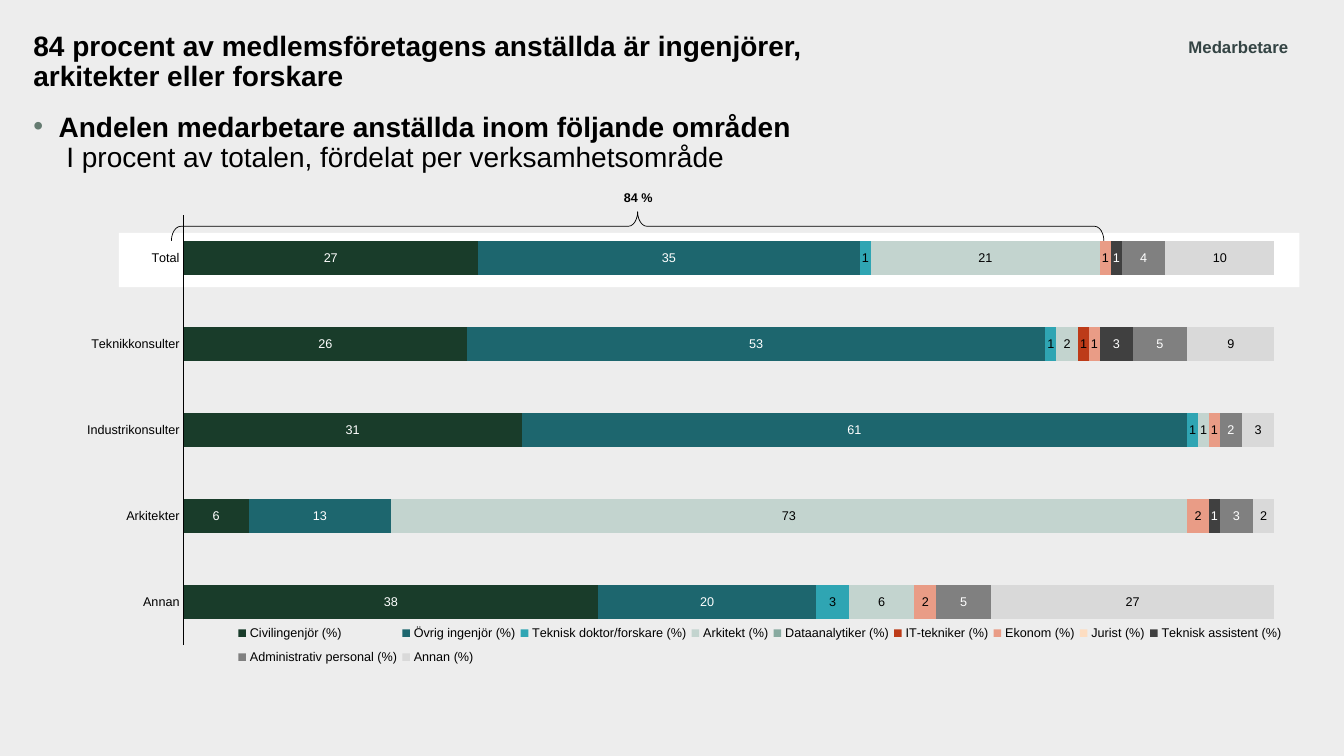
"""Build the slide on how the member companies' staff divide by profession."""
import pptx
import pptx.chart.data
import pptx.dml.color
import pptx.enum.chart
import pptx.enum.shapes
import pptx.enum.text
import pptx.oxml
import pptx.oxml.ns
import pptx.util

FONT = "Arial"
BLACK, WHITE = "000000", "FFFFFF"
HEADING = "84 procent av medlemsföretagens anställda är ingenjörer,\varkitekter eller forskare"
SUBHEADING = "Andelen medarbetare anställda inom följande områden"
UNIT_NOTE = " I procent av totalen, fördelat per verksamhetsområde"

AREAS = ["Total", "Teknikkonsulter", "Industrikonsulter", "Arkitekter", "Annan"]
PROFESSIONS = [
    ("Civilingenjör (%)", (27, 26, 31, 6, 38), "193C2A", WHITE),
    ("Övrig ingenjör (%)", (35, 53, 61, 13, 20), "1D666E", WHITE),
    ("Teknisk doktor/forskare (%)", (1, 1, 1, 0, 3), "2FA5B3", BLACK),
    ("Arkitekt\u00a0(%)", (21, 2, 1, 73, 6), "C3D4CF", BLACK),
    ("Dataanalytiker\u00a0(%)", (0, 0, 0, 0, 0), "88AAA0", None),
    ("IT-tekniker\u00a0(%)", (0, 1, 0, 0, 0), "BD3B18", BLACK),
    ("Ekonom\u00a0(%)", (1, 1, 1, 2, 2), "E99C86", BLACK),
    ("Jurist\u00a0(%)", (0, 0, 0, 0, 0), "FDDDC1", None),
    ("Teknisk assistent\u00a0(%)", (1, 3, 0, 1, 0), "404040", WHITE),
    ("Administrativ personal\u00a0(%)", (4, 5, 2, 3, 5), "808080", WHITE),
    ("Annan\u00a0(%)", (10, 9, 3, 2, 27), "D9D9D9", BLACK),
]

# left, top, width, height in percent of the slide
PLACES = {
    "highlight": (8.85, 30.8, 87.83, 7.2),
    "heading": (2.48, 4.27, 95.1, 7.47),
    "subheading": (2.48, 14.93, 95.1, 9.47),
    "tag": (86.78, 4.27, 10.73, 4),
    "chart": (4.43, 27.2, 92.25, 63.2),
    "brace": (12.75, 28, 69.38, 3.87),
    "sum": (45.68, 24.53, 3.68, 3.33),
}
# left, top, width, height as shares of the chart
PLOT = (0.1, 0.02, 0.88, 0.9)
LEGEND = (0.14, 0.86, 0.85, 0.12)

prs = pptx.Presentation()
prs.slide_width, prs.slide_height = pptx.util.Inches(13.33), pptx.util.Inches(7.5)
s = prs.slides.add_slide(prs.slide_layouts[6])


def rgb(value):
    """Turn a hex string into a colour."""
    return pptx.dml.color.RGBColor.from_string(value)


def place(name):
    """Give a part's box in slide units."""
    sides = (prs.slide_width, prs.slide_height) * 2
    return [int(share * side / 100) for share, side in zip(PLACES[name], sides)]


def style(font, size, color=BLACK, bold=False):
    """Set typeface, size, colour and weight."""
    font.name, font.size, font.bold = FONT, pptx.util.Pt(size), bold
    font.color.rgb = rgb(color)


def add_text(name, text, size, color=BLACK, inset=True, wrap=True):
    """Add a bold text box and return its paragraph."""
    tf = s.shapes.add_textbox(*place(name)).text_frame
    tf.word_wrap = wrap
    if not inset:
        tf.margin_left = tf.margin_top = tf.margin_right = tf.margin_bottom = 0
    p = tf.paragraphs[0]
    p.text = text
    if not inset:
        p.line_spacing = 0.9
    for r in p.runs:
        style(r.font, size, color, True)
    return p


def add_bullet(p, color):
    """Give a paragraph a hanging round bullet."""
    pPr = p._p.get_or_add_pPr()
    indent = pptx.util.Inches(0.25)
    pPr.set("marL", str(indent))
    pPr.set("indent", str(-indent))
    ns = pptx.oxml.ns.nsdecls("a")
    for xml in (
        f'<a:buClr {ns}><a:srgbClr val="{color}"/></a:buClr>',
        f'<a:buFont {ns} typeface="{FONT}"/>',
        f'<a:buChar {ns} char="•"/>',
    ):
        pPr.append(pptx.oxml.parse_xml(xml))


def set_layout(parent, index, box, inner=False):
    """Fix the position of a chart part."""
    for old in parent.findall(pptx.oxml.ns.qn("c:layout")):
        parent.remove(old)
    target = '<c:layoutTarget val="inner"/>' if inner else ""
    modes = "".join(f'<c:{k}Mode val="edge"/>' for k in "xy")
    sizes = "".join(f'<c:{k} val="{v}"/>' for k, v in zip("xywh", box))
    ns = pptx.oxml.ns.nsdecls("c")
    xml = f"<c:layout {ns}><c:manualLayout>{target}{modes}{sizes}</c:manualLayout></c:layout>"
    parent.insert(index, pptx.oxml.parse_xml(xml))


def add_staff_chart():
    """Add the stacked bars with their legend."""
    enum = pptx.enum.chart
    data = pptx.chart.data.CategoryChartData(number_format="0")
    data.categories = AREAS
    for name, values, _, _ in PROFESSIONS:
        data.add_series(name, values)
    chart = s.shapes.add_chart(enum.XL_CHART_TYPE.BAR_STACKED, *place("chart"), data).chart
    style(chart.font, 10)
    chart.has_title = False
    chart.has_legend = True
    chart.legend.position = enum.XL_LEGEND_POSITION.BOTTOM
    chart.legend.include_in_layout = False
    style(chart.legend.font, 9)

    areas, percent = chart.category_axis, chart.value_axis
    areas.reverse_order = True
    areas.major_tick_mark = enum.XL_TICK_MARK.NONE
    areas.format.line.color.rgb = rgb(BLACK)
    areas.format.line.width = pptx.util.Pt(0.75)
    style(areas.tick_labels.font, 9)
    percent.minimum_scale, percent.maximum_scale = 0, 100
    percent.has_major_gridlines = False
    percent.visible = False

    plot = chart.plots[0]
    plot.gap_width, plot.overlap, plot.vary_by_categories = 150, 100, False
    for series, (_, _, fill, label_color) in zip(plot.series, PROFESSIONS):
        series.format.fill.solid()
        series.format.fill.fore_color.rgb = rgb(fill)
        series.invert_if_negative = False
        if label_color:
            labels = series.data_labels
            labels.show_value = True
            labels.position = enum.XL_LABEL_POSITION.CENTER
            labels.number_format, labels.number_format_is_linked = "0;;;", False
            style(labels.font, 9, label_color)
    set_layout(chart._chartSpace.xpath(".//c:plotArea")[0], 0, PLOT, inner=True)
    set_layout(chart.legend._element, 1, LEGEND)


def add_brace():
    """Add the brace, turned so that its tip points up."""
    left, top, width, height = place("brace")
    shift = (width - height) // 2
    kind = pptx.enum.shapes.MSO_SHAPE.LEFT_BRACE
    brace = s.shapes.add_shape(kind, left + shift, top - shift, height, width)
    brace.rotation = 90
    brace.adjustments[0] = 0.32
    brace.shadow.inherit = False
    brace.fill.background()
    brace.line.color.rgb = rgb(BLACK)
    brace.line.width = pptx.util.Pt(0.5)


s.background.fill.solid()
s.background.fill.fore_color.rgb = rgb("EDEDED")

highlight = s.shapes.add_shape(pptx.enum.shapes.MSO_SHAPE.RECTANGLE, *place("highlight"))
highlight.shadow.inherit = False
highlight.fill.solid()
highlight.fill.fore_color.rgb = rgb(WHITE)
highlight.line.fill.background()

add_text("heading", HEADING, 20, inset=False)
p = add_text("subheading", SUBHEADING, 20, inset=False)
add_bullet(p, "657B71")
p.add_line_break()
r = p.add_run()
r.text = UNIT_NOTE
style(r.font, 20)
add_text("tag", "Medarbetare", 12, "344444").alignment = pptx.enum.text.PP_ALIGN.CENTER

add_staff_chart()
add_brace()
add_text("sum", "84 %", 9, wrap=False)

prs.save("out.pptx")
